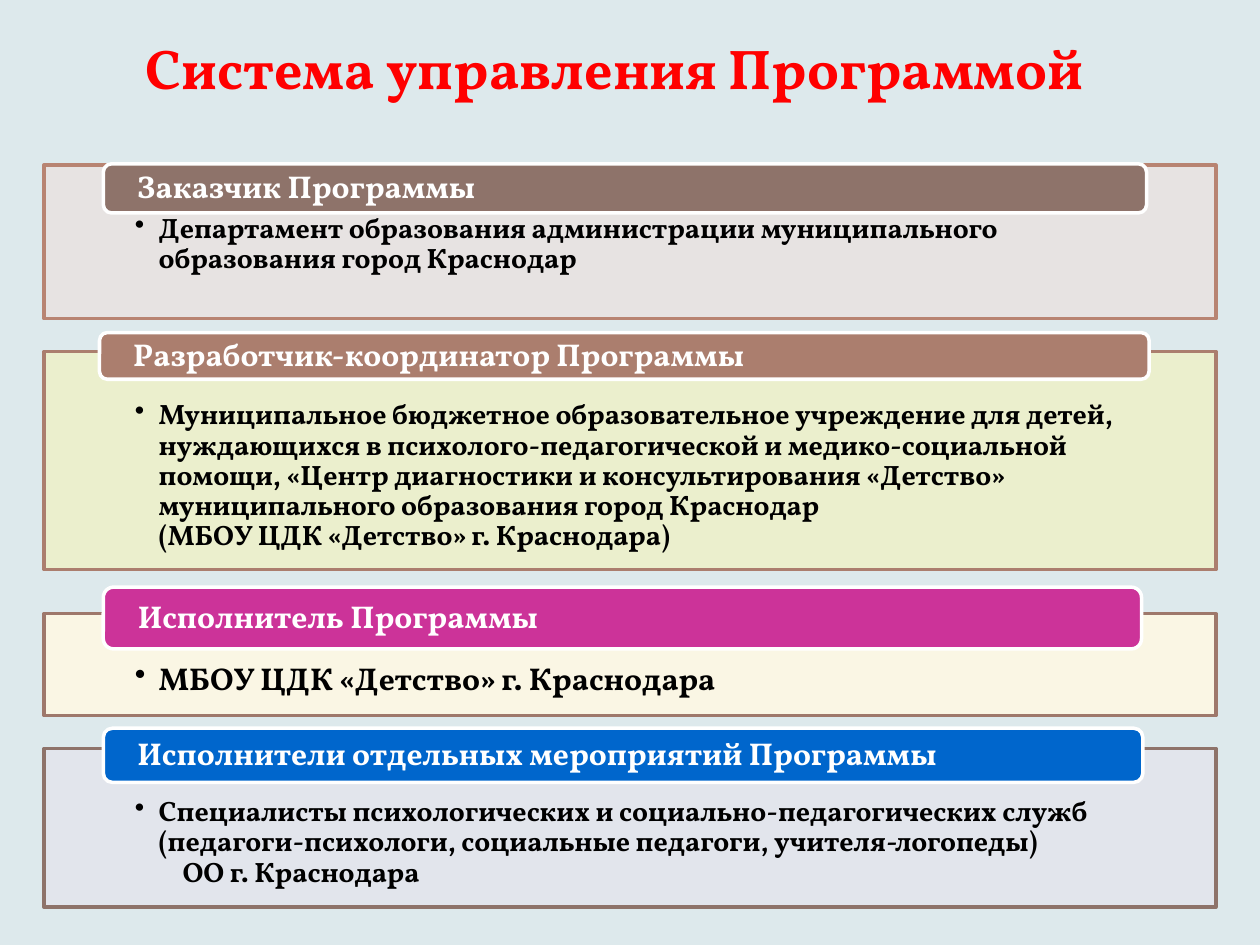
"""Build the slide on the management system of the programme."""
import lxml.etree
import pptx
import pptx.dml.color
import pptx.enum.shapes
import pptx.enum.text
import pptx.oxml.ns
import pptx.util

Inches, Pt = pptx.util.Inches, pptx.util.Pt
RGB = pptx.dml.color.RGBColor.from_string
SHAPE = pptx.enum.shapes.MSO_SHAPE
ALIGN, ANCHOR = pptx.enum.text.PP_ALIGN, pptx.enum.text.MSO_ANCHOR
qn = pptx.oxml.ns.qn

THEME = {
    "font": "Vollkorn", "back": "DDE9EC", "title": "FF0000", "head": "FFFFFF", "body": "000000",
    "title_size": 32, "head_size": 18, "edge": 2, "alpha": 90,
}
LEFT, WIDTH = 0.35, 9.3
HANG = 0.19
FRAME = {"word_wrap": True, "vertical_anchor": ANCHOR.MIDDLE, "margin_left": Inches(0.25),
         "margin_right": Inches(0.25), "margin_top": 0, "margin_bottom": 0}
INSET = {"word_wrap": True, "vertical_anchor": ANCHOR.TOP, "margin_left": Inches(0.72),
         "margin_right": Inches(0.72), "margin_top": Inches(0.39), "margin_bottom": Inches(0.12)}
TITLE = {"word_wrap": True, "vertical_anchor": ANCHOR.MIDDLE, "margin_right": Inches(0.2)}

BLOCKS = [
    {"panel": (1.31, 1.22, "E9E3E1", "B88472"), "bar": (0.82, 1.3, 8.28, 0.39, "8E736A"),
     "head": "Заказчик Программы", "size": 16,
     "body": ["Департамент образования администрации муниципального образования город Краснодар"]},
    {"panel": (2.79, 1.73, "EDF0CA", "AB7E6E"), "bar": (0.79, 2.64, 8.33, 0.37, "AB7E6E"),
     "head": "Разработчик-координатор Программы", "size": 16,
     "body": ["Муниципальное бюджетное образовательное учреждение для детей, нуждающихся в "
              "психолого-педагогической и медико-социальной помощи, «Центр диагностики и "
              "консультирования «Детство» муниципального образования город Краснодар\v"
              "(МБОУ ЦДК «Детство» г. Краснодара)"]},
    {"panel": (4.87, 0.81, "FEF8E4", "9E786B"), "bar": (0.82, 4.66, 8.24, 0.49, "CC3399"),
     "head": "Исполнитель Программы", "size": 18,
     "body": ["МБОУ ЦДК «Детство» г. Краснодара"]},
    {"panel": (5.94, 1.26, "E3E5ED", "8E736A"), "bar": (0.82, 5.78, 8.25, 0.43, "0066CC"),
     "head": "Исполнители отдельных мероприятий Программы", "size": 16,
     "body": ["Специалисты психологических и социально-педагогических служб "
              "(педагоги-психологи, социальные педагоги, учителя-логопеды)",
              "ОО г. Краснодара"]},
]


def write(frame, lines, form, size, tint, align, space):
    """Fill a text frame with bold lines in one style."""
    for key, val in form.items():
        setattr(frame, key, val)
    frame.text = "\n".join(lines)
    for para in frame.paragraphs:
        look = {"alignment": align, "line_spacing": space, "space_before": Pt(0), "space_after": Pt(0)}
        for key, val in look.items():
            setattr(para, key, val)
        for run in para.runs:
            for key, val in {"name": THEME["font"], "size": Pt(size), "bold": True}.items():
                setattr(run.font, key, val)
            run.font.color.rgb = RGB(tint)


def draw(slide, kind, box, fill, edge):
    """Add a filled and outlined shape without a shadow."""
    shape = slide.shapes.add_shape(kind, *map(Inches, box))
    shape.shadow.inherit = False
    shape.fill.solid()
    shape.fill.fore_color.rgb = RGB(fill)
    shape.line.color.rgb = RGB(edge)
    shape.line.width = Pt(THEME["edge"])
    return shape


deck = pptx.Presentation()
deck.slide_width, deck.slide_height = Inches(10), Inches(7.5)
slide = deck.slides.add_slide(deck.slide_layouts[5])
slide.background.fill.solid()
slide.background.fill.fore_color.rgb = RGB(THEME["back"])

title = slide.shapes.title
for key, val in {"left": 0.43, "top": 0, "width": 9, "height": 1.07}.items():
    setattr(title, key, Inches(val))
write(title.text_frame, ["Система управления Программой"], TITLE,
      THEME["title_size"], THEME["title"], ALIGN.CENTER, 1.0)

for block in BLOCKS:
    top, high, fill, edge = block["panel"]
    panel = draw(slide, SHAPE.RECTANGLE, (LEFT, top, WIDTH, high), fill, edge)
    tone = panel.fill._xPr.find(qn("a:solidFill"))[0]
    lxml.etree.SubElement(tone, qn("a:alpha"), val=str(THEME["alpha"] * 1000))
    write(panel.text_frame, block["body"], INSET, block["size"], THEME["body"], ALIGN.LEFT, 0.9)
    for rank, para in enumerate(panel.text_frame.paragraphs):
        props = para._p.get_or_add_pPr()
        props.set("marL", str(Inches(HANG * (rank + 1))))
        props.set("indent", str(0 if rank else -Inches(HANG)))
        if rank == 0:
            lxml.etree.SubElement(props, qn("a:buChar"), char="•")

    *box, fill = block["bar"]
    bar = draw(slide, SHAPE.ROUNDED_RECTANGLE, box, fill, THEME["head"])
    write(bar.text_frame, [block["head"]], FRAME, THEME["head_size"], THEME["head"], ALIGN.LEFT, 0.9)

deck.save("out.pptx")
